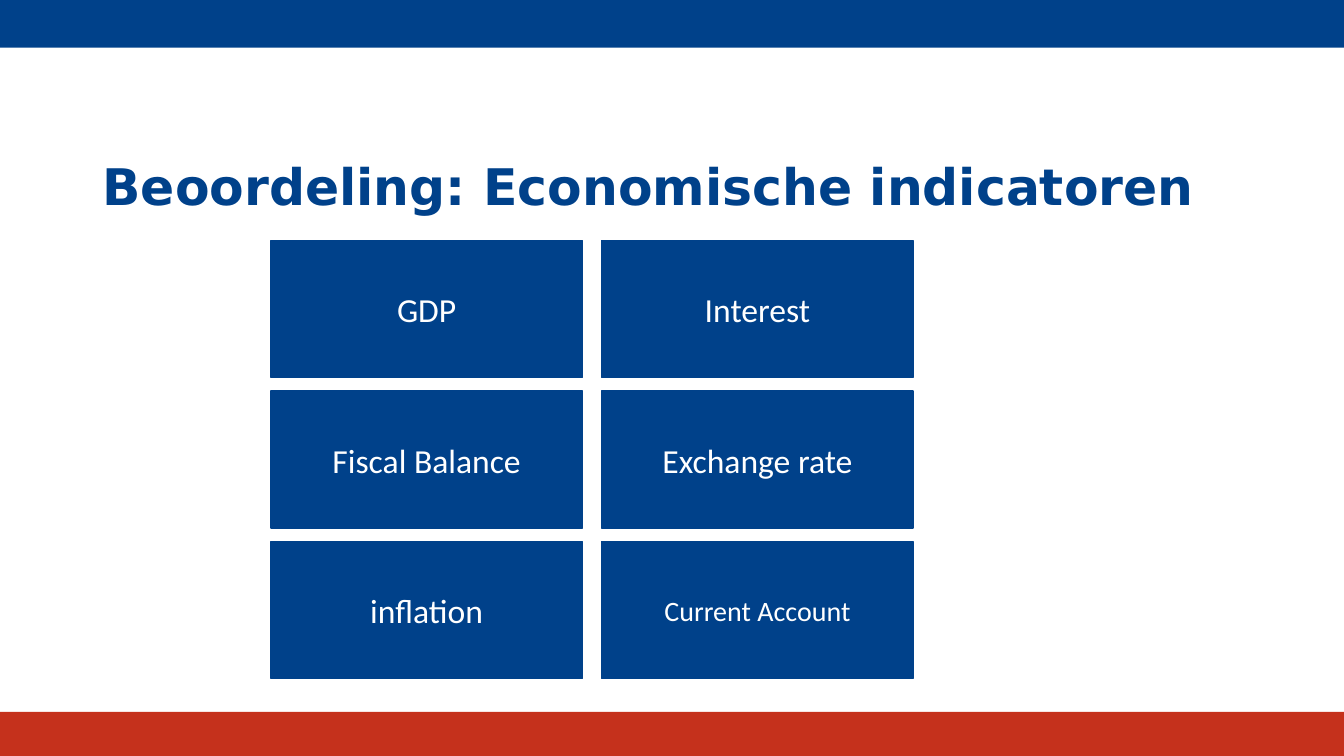
"""Build a slide with a grid of six economic indicators."""
import pptx
import pptx.dml.color
import pptx.enum.shapes
import pptx.enum.text
import pptx.util

Pt = pptx.util.Pt
RGBColor = pptx.dml.color.RGBColor
PP_ALIGN = pptx.enum.text.PP_ALIGN
MSO_ANCHOR = pptx.enum.text.MSO_ANCHOR

BLUE = RGBColor(0x00, 0x41, 0x8A)
RED = RGBColor(0xC5, 0x31, 0x1C)
WHITE = RGBColor(0xFF, 0xFF, 0xFF)

TITLE = "Beoordeling: Economische indicatoren"
INDICATORS = [
    [("GDP", 24), ("Interest", 24)],
    [("Fiscal Balance", 24), ("Exchange rate", 24)],
    [("inflation", 24), ("Current Account", 20)],
]
SLIDE_W, SLIDE_H = 960, 540
BANDS = [(0, 34, BLUE), (508.4, SLIDE_H - 508.4, RED)]
GRID_LEFT, GRID_TOP = 193.5, 171.8
BOX_W, BOX_H = 222.5, 97.8
GAP_X, GAP_Y = 13.8, 9.8


def add_rect(s, left, top, width, height, color):
    """Add a flat filled rectangle."""
    sp = s.shapes.add_shape(pptx.enum.shapes.MSO_SHAPE.RECTANGLE,
                            Pt(left), Pt(top), Pt(width), Pt(height))
    sp.shadow.inherit = False
    sp.fill.solid()
    sp.fill.fore_color.rgb = color
    sp.line.fill.background()
    return sp


def add_title(s):
    """Place and format the title."""
    sp = s.shapes.title
    sp.left, sp.top, sp.width, sp.height = Pt(66), Pt(86.4), Pt(828), Pt(97.8)
    tf = sp.text_frame
    tf.text = TITLE
    tf.word_wrap = True
    tf.auto_size = pptx.enum.text.MSO_AUTO_SIZE.NONE
    tf.vertical_anchor = MSO_ANCHOR.MIDDLE
    p = tf.paragraphs[0]
    p.alignment = PP_ALIGN.LEFT
    p.line_spacing = 0.9
    p.font.name = "DejaVu Sans"
    p.font.size = Pt(36)
    p.font.bold = True
    p.font.color.rgb = BLUE


def add_indicator(s, row, col, label, size):
    """Add one labelled box at its place in the grid."""
    sp = add_rect(s, GRID_LEFT + col * (BOX_W + GAP_X),
                  GRID_TOP + row * (BOX_H + GAP_Y), BOX_W, BOX_H, BLUE)
    sp.line.color.rgb = BLUE
    sp.line.width = Pt(1)
    tf = sp.text_frame
    tf.text = label
    tf.word_wrap = True
    tf.vertical_anchor = MSO_ANCHOR.MIDDLE
    p = tf.paragraphs[0]
    p.alignment = PP_ALIGN.CENTER
    p.font.name = "Calibri"
    p.font.size = Pt(size)
    p.font.color.rgb = WHITE


def main():
    """Build and save the presentation."""
    prs = pptx.Presentation()
    prs.slide_width, prs.slide_height = Pt(SLIDE_W), Pt(SLIDE_H)
    s = prs.slides.add_slide(prs.slide_layouts.get_by_name("Title Only"))
    for top, height, color in BANDS:
        add_rect(s, 0, top, SLIDE_W, height, color)
    add_title(s)
    for row, boxes in enumerate(INDICATORS):
        for col, (label, size) in enumerate(boxes):
            add_indicator(s, row, col, label, size)
    prs.save("out.pptx")


if __name__ == "__main__":
    main()
